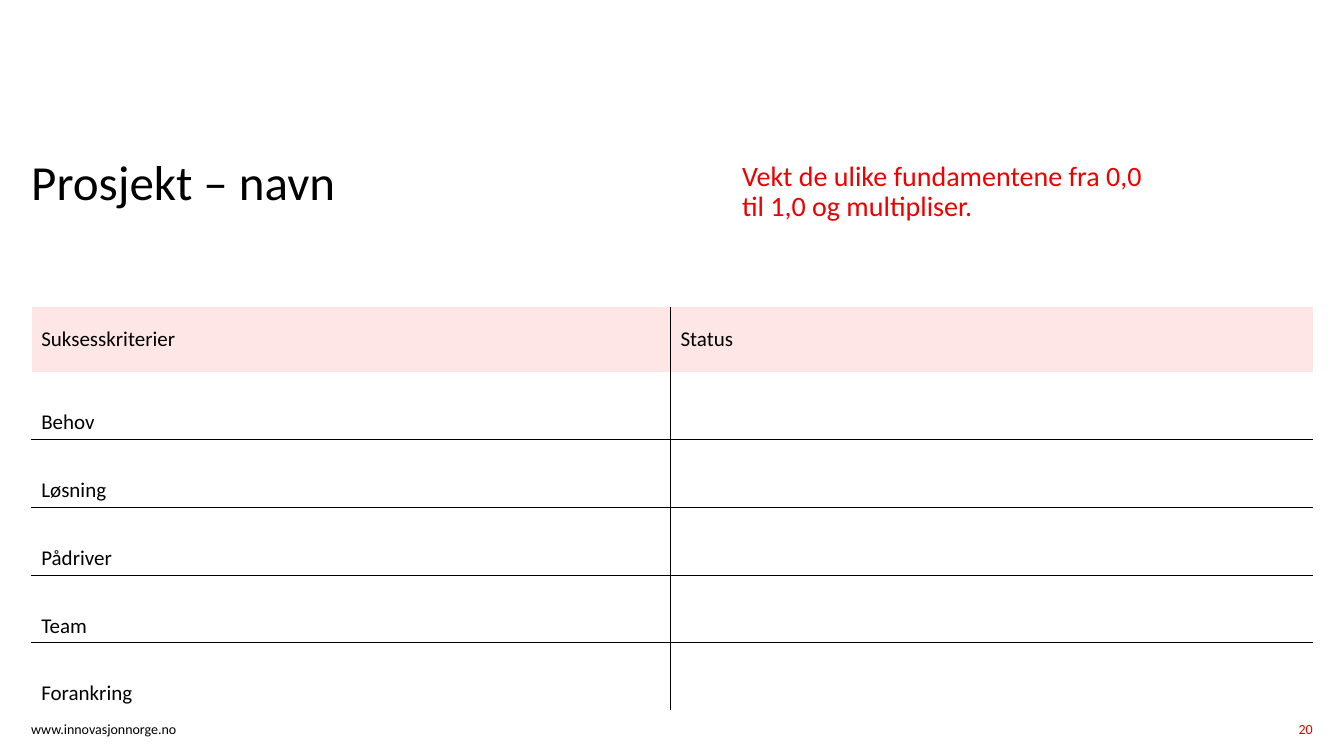
from lxml.etree import SubElement
from pptx import Presentation
from pptx.dml.color import RGBColor
from pptx.enum.text import MSO_ANCHOR, MSO_AUTO_SIZE, PP_ALIGN
from pptx.oxml import parse_xml
from pptx.oxml.ns import nsdecls, qn
from pptx.util import Inches, Pt

WIDE, HIGH = 13.33, 7.5
LEFT, SPAN = 0.31, 12.71
COLORS = {"ink": "000000", "red": "ED0000", "pink": "FFE6E6", "white": "FFFFFF"}
PLAIN = "{2D5ABB26-0587-4C30-8999-92F81FD0307C}"
HEADS = ["Suksesskriterier", "Status"]
TERMS = ["Behov", "Løsning", "Pådriver", "Team", "Forankring"]


def apply(item, values):
    for name, value in values.items():
        setattr(item, name, value)


def place(shape, box):
    names = ("left", "top", "width", "height")
    apply(shape, dict(zip(names, map(Inches, box))))


def style(para, size, color="ink", **form):
    apply(para, form)
    apply(para.font, {"size": Pt(size), "name": "Calibri", "bold": False})
    para.font.color.rgb = RGBColor.from_string(COLORS[color])


def write(shape, text, size, color="ink", align=PP_ALIGN.LEFT, **form):
    frame = shape.text_frame
    frame.text = text
    apply(frame, {
        "word_wrap": True, "auto_size": MSO_AUTO_SIZE.NONE,
        "vertical_anchor": MSO_ANCHOR.TOP, "margin_left": 0,
        "margin_right": 0, "margin_top": 0, "margin_bottom": 0,
    })
    style(frame.paragraphs[0], size, color, alignment=align, **form)


def header(slide, box):
    left, top, width, height = box
    title, note = slide.shapes.title, slide.placeholders[1]
    place(title, (left, top, width * 0.45, height))
    place(note, (left + 7.05, top + 0.04, width * 0.32, height))
    write(title, "Prosjekt – navn", 35, line_spacing=0.9)
    write(note, "Vekt de ulike fundamentene fra 0,0 til 1,0 og multipliser.",
          20, "red", line_spacing=0.9, space_before=Pt(0))


def border(cell, edges):
    props = cell._tc.get_or_add_tcPr()
    for spot, side in enumerate("LRTB"):
        color, width = edges.get(side, (None, 0))
        line = parse_xml(f'<a:ln{side} {nsdecls("a")} w="{Pt(width)}"/>')
        if color:
            fill = SubElement(line, qn("a:solidFill"))
            SubElement(fill, qn("a:srgbClr"), val=COLORS[color])
        else:
            SubElement(line, qn("a:noFill"))
        props.insert(spot, line)


def fill_cell(cell, text, row, col, last):
    cell.text = text
    para = cell.text_frame.paragraphs[0]
    if row == 0:
        cell.vertical_anchor = MSO_ANCHOR.MIDDLE
        cell.fill.solid()
        cell.fill.fore_color.rgb = RGBColor.from_string(COLORS["pink"])
        style(para, 15)
    else:
        cell.vertical_anchor = MSO_ANCHOR.BOTTOM
        cell.fill.background()
        style(para, 15, line_spacing=0.9)
    rule = ("ink", 0.5)
    edges = {"L": rule} if col else {"L": ("white", 1), "R": rule}
    if row > 1:
        edges["T"] = rule
    if 0 < row < last:
        edges["B"] = rule
    border(cell, edges)


def criteria(slide, box):
    rows = [HEADS] + [[term, ""] for term in TERMS]
    last = len(rows) - 1
    frame = slide.shapes.add_table(len(rows), 2, *map(Inches, box))
    table = frame.table
    apply(table, {"first_row": False, "horz_banding": False})
    table._tbl.tblPr.find(qn("a:tableStyleId")).text = PLAIN
    width, height = box[2:]
    first, top = 6.34, 0.64
    for col, size in zip(table.columns, (first, width - first)):
        col.width = Inches(size)
    for row, line in enumerate(rows):
        table.rows[row].height = Inches((height - top) / last if row else top)
        for col, text in enumerate(line):
            fill_cell(table.cell(row, col), text, row, col, last)


def footer(slide, box):
    left, top, width, height = box
    page = 1.08
    site = slide.shapes.add_textbox(0, 0, 0, 0)
    place(site, (left, top, 2.85, height))
    write(site, "www.innovasjonnorge.no", 10)
    count = slide.shapes.add_textbox(0, 0, 0, 0)
    place(count, (left + width - page, top, page, height))
    write(count, "20", 10, "red", PP_ALIGN.RIGHT)


def main():
    deck = Presentation()
    apply(deck, {"slide_width": Inches(WIDE), "slide_height": Inches(HIGH)})
    slide = deck.slides.add_slide(deck.slide_layouts[0])
    header(slide, (LEFT, 1.57, SPAN, 1.41))
    criteria(slide, (LEFT, 3.05, SPAN, 4))
    footer(slide, (LEFT, 7.15, SPAN, 0.24))
    deck.save("out.pptx")


if __name__ == "__main__":
    main()
